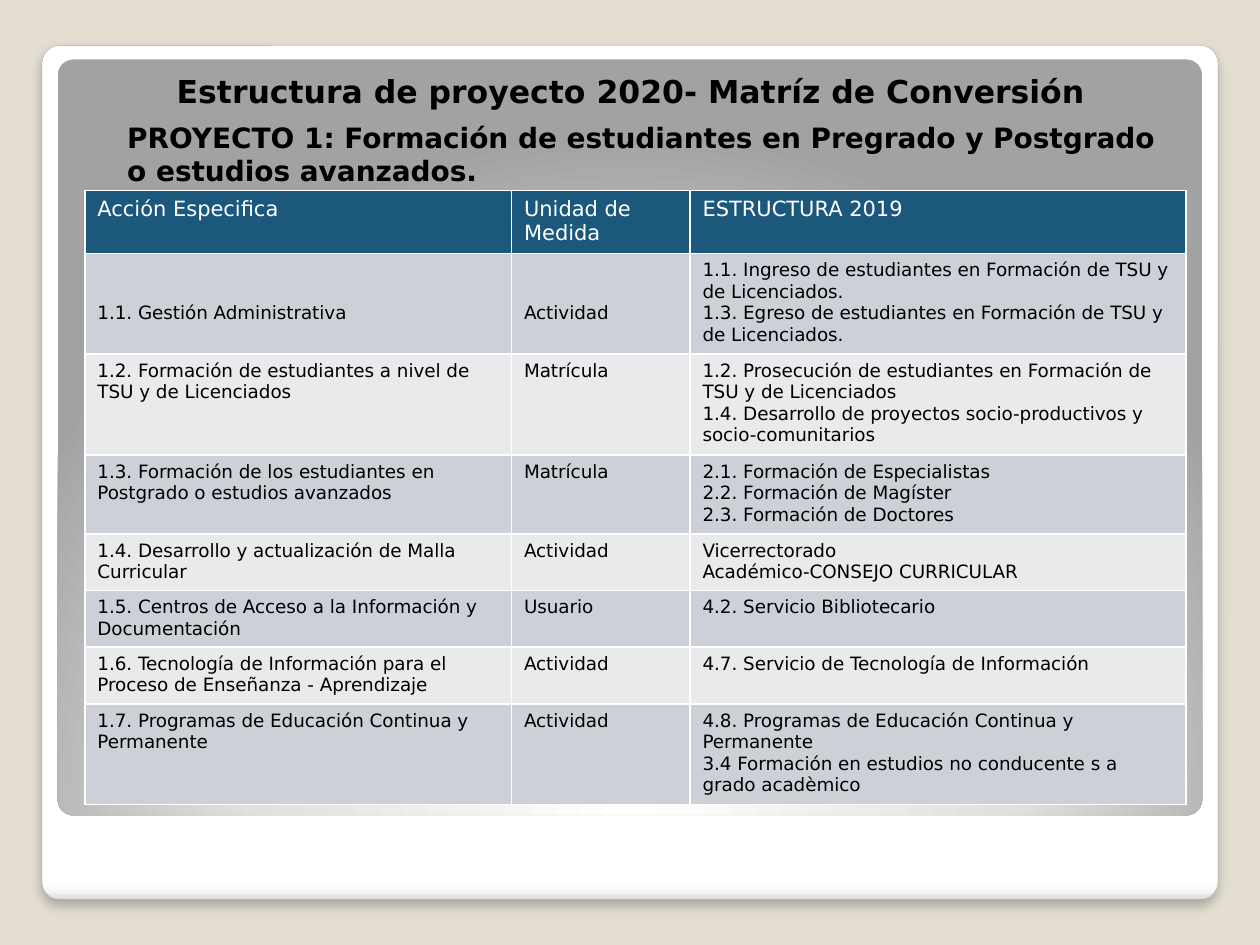
from lxml import etree
from pptx import Presentation
from pptx.dml.color import RGBColor
from pptx.enum.shapes import MSO_SHAPE
from pptx.enum.text import MSO_ANCHOR, MSO_AUTO_SIZE, PP_ALIGN
from pptx.oxml import parse_xml
from pptx.oxml.ns import nsdecls, qn
from pptx.util import Pt

ROUNDED = MSO_SHAPE.ROUNDED_RECTANGLE
TOP = MSO_ANCHOR.TOP
GROW = MSO_AUTO_SIZE.SHAPE_TO_FIT_TEXT
LEFT, CENTER = PP_ALIGN.LEFT, PP_ALIGN.CENTER

BLACK = RGBColor(0x00, 0x00, 0x00)
WHITE = RGBColor(0xFF, 0xFF, 0xFF)
SAND = RGBColor(0xE3, 0xDE, 0xD1)
PALE_GRAY = RGBColor(0xF7, 0xF7, 0xF7)
SOFT_GRAY = RGBColor(0xE1, 0xE1, 0xE1)
EDGE_GRAY = RGBColor(0xDA, 0xDA, 0xDA)
OUTLINE_GRAY = RGBColor(0xA4, 0xA4, 0xA4)
DEEP_GRAY = RGBColor(0xA2, 0xA2, 0xA2)
NAVY = RGBColor(0x1B, 0x58, 0x7C)
BAND_DARK = RGBColor(0xCD, 0xD1, 0xD7)
BAND_LIGHT = RGBColor(0xE8, 0xEA, 0xEC)

LINEAR_DOWN = '<a:lin ang="5400000" scaled="0"/>'
RADIAL_BELOW = ('<a:path path="circle"><a:fillToRect l="50000" t="175000" '
                'r="50000" b="-75000"/></a:path>')

HEADINGS = ["Acción Especifica", "Unidad de Medida", "ESTRUCTURA 2019"]
ACTIONS = [
    ("1.1. Gestión Administrativa", "Actividad",
     ["1.1. Ingreso de estudiantes en Formación de TSU y de Licenciados.",
      "1.3. Egreso de estudiantes en Formación de TSU y de Licenciados."]),
    ("1.2. Formación de estudiantes a nivel de TSU y de Licenciados", "Matrícula",
     ["1.2. Prosecución de estudiantes en Formación de TSU y de Licenciados",
      "1.4. Desarrollo de proyectos socio-productivos y socio-comunitarios"]),
    ("1.3. Formación de los estudiantes en Postgrado o estudios avanzados", "Matrícula",
     ["2.1. Formación de Especialistas",
      "2.2. Formación de Magíster",
      "2.3. Formación de Doctores"]),
    ("1.4. Desarrollo y actualización de Malla Curricular", "Actividad",
     ["Vicerrectorado", "Académico-CONSEJO CURRICULAR"]),
    ("1.5. Centros de Acceso a la Información y Documentación", "Usuario",
     ["4.2. Servicio Bibliotecario"]),
    ("1.6. Tecnología de Información para el Proceso de Enseñanza - Aprendizaje",
     "Actividad", ["4.7. Servicio de Tecnología de Información"]),
    ("1.7. Programas de Educación Continua y Permanente", "Actividad",
     ["4.8. Programas de Educación Continua y Permanente",
      "3.4 Formación en estudios no conducente s a grado acadèmico"]),
]
COLUMN_WIDTHS = [243.8, 102, 283.5]
ROW_HEIGHTS = [36, 57.6, 57.6, 44.6, 32.4, 32.4, 32.4, 57.6]
LOWERED_MARGIN = 28.2


class SlideBuilder:
    font_name = "DejaVu Sans"
    heading_size = 12
    cell_size = 10.5
    border_width = 1

    def __init__(self, slide):
        self.slide = slide

    def background(self, color):
        fill = self.slide.background.fill
        fill.solid()
        fill.fore_color.rgb = color

    def panel(self, left, top, width, height, stops, direction):
        panel = self.slide.shapes.add_shape(
            ROUNDED, Pt(left), Pt(top), Pt(width), Pt(height))
        panel.adjustments[0] = 0.021
        panel.shadow.inherit = False
        panel.line.fill.background()
        marks = "".join(
            f'<a:gs pos="{percent * 1000}"><a:srgbClr val="{color}"/></a:gs>'
            for percent, color in stops)
        panel.element.spPr.insert(2, parse_xml(
            f'<a:gradFill {nsdecls("a")} rotWithShape="1">'
            f'<a:gsLst>{marks}</a:gsLst>{direction}</a:gradFill>'))
        return panel

    def outline(self, panel, color, width):
        panel.line.color.rgb = color
        panel.line.width = Pt(width)

    def shadow(self, panel, color, opacity, blur, distance):
        effects = panel.element.spPr.find(qn("a:effectLst"))
        effects.append(parse_xml(
            f'<a:outerShdw {nsdecls("a")} blurRad="{Pt(blur)}" dist="{Pt(distance)}" '
            f'dir="5400000" algn="t" rotWithShape="0"><a:srgbClr val="{color}">'
            f'<a:alpha val="{opacity * 1000}"/></a:srgbClr></a:outerShdw>'))

    def styled_run(self, paragraph, text, size, color, bold=False):
        run = paragraph.add_run()
        run.text = text
        run.font.name = self.font_name
        run.font.size = Pt(size)
        run.font.bold = bold
        run.font.color.rgb = color

    def heading(self, holder, text, left, top, width, height, size, align, wrap):
        holder.left, holder.top = Pt(left), Pt(top)
        holder.width, holder.height = Pt(width), Pt(height)
        frame = holder.text_frame
        frame.word_wrap = wrap
        frame.auto_size = GROW
        frame.vertical_anchor = TOP
        paragraph = frame.paragraphs[0]
        paragraph.alignment = align
        paragraph.space_before = Pt(0)
        properties = paragraph._p.get_or_add_pPr()
        properties.set("marL", "0")
        properties.set("indent", "0")
        etree.SubElement(properties, qn("a:buNone"))
        self.styled_run(paragraph, text, size, BLACK, bold=True)
        holder.element.getparent().append(holder.element)

    def cell(self, cell, lines, size, color, fill):
        properties = cell._tc.get_or_add_tcPr()
        for side in ("lnL", "lnR", "lnT", "lnB"):
            properties.append(parse_xml(
                f'<a:{side} {nsdecls("a")} w="{Pt(self.border_width)}"><a:solidFill>'
                f'<a:srgbClr val="{WHITE}"/></a:solidFill></a:{side}>'))
        cell.fill.solid()
        cell.fill.fore_color.rgb = fill
        frame = cell.text_frame
        for index, line in enumerate(lines):
            paragraph = frame.add_paragraph() if index else frame.paragraphs[0]
            self.styled_run(paragraph, line, size, color)

    def table(self, left, top, widths, heights, headings, records):
        table = self.slide.shapes.add_table(
            len(heights), len(widths), Pt(left), Pt(top),
            Pt(sum(widths)), Pt(sum(heights))).table
        for column, width in zip(table.columns, widths):
            column.width = Pt(width)
        for row, height in zip(table.rows, heights):
            row.height = Pt(height)
        for column, heading in enumerate(headings):
            self.cell(table.cell(0, column), [heading], self.heading_size, WHITE, NAVY)
        for row, (action, unit, structure) in enumerate(records, start=1):
            band = BAND_DARK if row % 2 else BAND_LIGHT
            for column, lines in enumerate(([action], [unit], structure)):
                self.cell(table.cell(row, column), lines, self.cell_size, BLACK, band)
        return table


def main():
    presentation = Presentation()
    presentation.slide_width, presentation.slide_height = Pt(720), Pt(540)
    slide = presentation.slides.add_slide(presentation.slide_layouts[1])
    title, project = slide.placeholders
    builder = SlideBuilder(slide)

    builder.background(SAND)
    card = builder.panel(
        24, 26, 672, 488,
        [(0, WHITE), (98, WHITE), (99, PALE_GRAY), (100, EDGE_GRAY)], LINEAR_DOWN)
    builder.outline(card, OUTLINE_GRAY, 0.16)
    builder.shadow(card, BLACK, opacity=25, blur=6, distance=4)
    builder.panel(33, 34, 654, 432,
                  [(0, WHITE), (55, SOFT_GRAY), (100, DEEP_GRAY)], RADIAL_BELOW)

    builder.heading(title, "Estructura de proyecto 2020- Matríz de Conversión",
                    93.5, 37.5, 534, 29, 18, CENTER, wrap=False)
    builder.heading(project, "PROYECTO 1: Formación de estudiantes en Pregrado y "
                    "Postgrado o estudios avanzados.",
                    65.5, 65, 612, 46, 16, LEFT, wrap=True)

    matrix = builder.table(48.5, 108.8, COLUMN_WIDTHS, ROW_HEIGHTS, HEADINGS, ACTIONS)
    for column in (0, 1):
        matrix.cell(1, column).margin_top = Pt(LOWERED_MARGIN)

    presentation.save("out.pptx")


if __name__ == "__main__":
    main()
